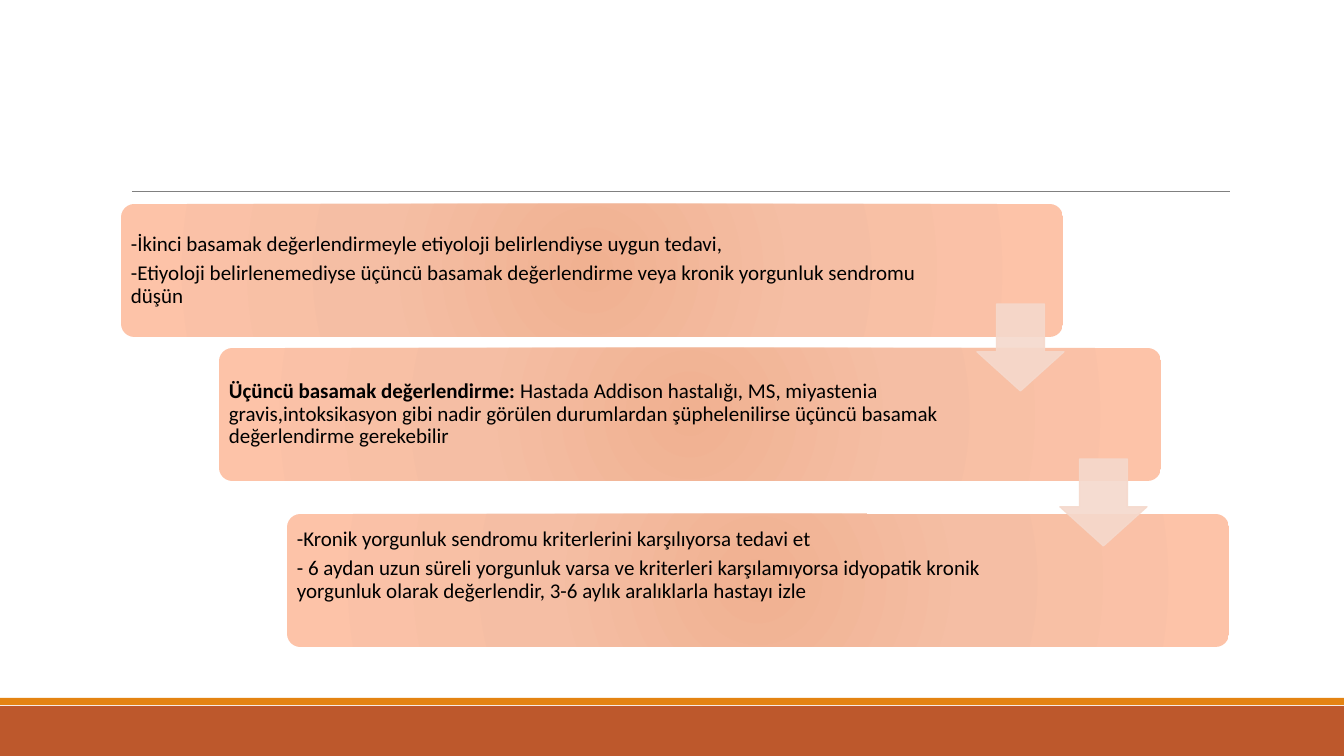
from pptx import Presentation
from pptx.dml.color import RGBColor
from pptx.enum.shapes import MSO_CONNECTOR, MSO_SHAPE
from pptx.enum.text import MSO_ANCHOR, PP_ALIGN
from pptx.oxml import parse_xml
from pptx.oxml.ns import nsdecls, qn
from pptx.util import Emu, Pt
from lxml.etree import SubElement

# Content: left, top, right inset, bottom inset, paragraphs of (text, bold) runs
STEPS = [
    (121, 204, 141, 6, [
        [("-İkinci basamak değerlendirmeyle etiyoloji belirlendiyse uygun tedavi,", False)],
        [("-Etiyoloji belirlenemediyse üçüncü basamak değerlendirme veya kronik "
          "yorgunluk sendromu düşün", False)],
    ]),
    (219, 348, 175, 6, [
        [("Üçüncü basamak değerlendirme: ", True),
         ("Hastada Addison hastalığı, MS, miyastenia gravis,intoksikasyon gibi nadir "
          "görülen durumlardan şüphelenilirse üçüncü basamak değerlendirme gerekebilir", False)],
    ]),
    (287, 514, 175, 36, [
        [("-Kronik yorgunluk sendromu kriterlerini karşılıyorsa tedavi et", False)],
        [("- 6 aydan uzun süreli yorgunluk varsa ve kriterleri karşılamıyorsa idyopatik "
          "kronik yorgunluk olarak değerlendir, 3-6 aylık aralıklarla hastayı izle", False)],
    ]),
]
ARROWS = [(977, 304), (1060, 459)]
STEP_W, STEP_H, ARROW, INSET = 942, 133, 87, 6
WIDTH, HEIGHT = 1344, 756

RUST = RGBColor(0xBD, 0x58, 0x2C)
ORANGE = RGBColor(0xE4, 0x83, 0x12)
GRAY = RGBColor(0x80, 0x80, 0x80)
BLACK = RGBColor(0, 0, 0)
PALE = RGBColor(0xF5, 0xD9, 0xCC)
GRADIENT = [(0, RGBColor(0xF0, 0xB1, 0x91)),
            (45, RGBColor(0xF5, 0xBE, 0xA4)),
            (100, RGBColor(0xFD, 0xC3, 0xA8))]


def px(n):
    return Emu(round(n * 914400 / 100.8))


def add_box(kind, x, y, w, h, color):
    sp = slide.shapes.add_shape(kind, px(x), px(y), px(w), px(h))
    sp.shadow.inherit = False
    sp.fill.solid()
    sp.fill.fore_color.rgb = color
    sp.line.fill.background()
    return sp


def set_radial_fill(sp):
    stops = "".join(f'<a:gs pos="{pos * 1000}"><a:srgbClr val="{color}"/></a:gs>'
                    for pos, color in GRADIENT)
    grad = parse_xml(
        f'<a:gradFill {nsdecls("a")} rotWithShape="1"><a:gsLst>{stops}</a:gsLst>'
        '<a:path path="circle"><a:fillToRect l="100000" t="100000" r="100000" b="100000"/>'
        '</a:path></a:gradFill>')
    props = sp.element.spPr
    props.replace(props.find(qn("a:solidFill")), grad)


def write_text(sp, paragraphs, right, bottom):
    tf = sp.text_frame
    tf.word_wrap = True
    tf.vertical_anchor = MSO_ANCHOR.MIDDLE
    tf.margin_left = tf.margin_top = px(INSET)
    tf.margin_right, tf.margin_bottom = px(right), px(bottom)
    for i, runs in enumerate(paragraphs):
        p = tf.add_paragraph() if i else tf.paragraphs[0]
        p.alignment = PP_ALIGN.LEFT
        p.line_spacing = 0.9
        p.space_after = Pt(5)
        for text, bold in runs:
            r = p.add_run()
            r.text = text
            r.font.name = "Calibri"
            r.font.size = Pt(15)
            r.font.bold = bold
            r.font.color.rgb = BLACK


prs = Presentation()
prs.slide_width, prs.slide_height = px(WIDTH), px(HEIGHT)
slide = prs.slides.add_slide(prs.slide_layouts[6])

# Footer bands and header rule
add_box(MSO_SHAPE.RECTANGLE, 0, 706, WIDTH, 50, RUST)
add_box(MSO_SHAPE.RECTANGLE, 0, 698, WIDTH, 7, ORANGE)
rule = slide.shapes.add_connector(MSO_CONNECTOR.STRAIGHT, px(132), px(191), px(1230), px(191))
rule.line.color.rgb = GRAY
rule.line.width = Pt(0.5)
SubElement(rule.element.spPr, qn("a:effectLst"))

# Staggered steps
for x, y, right, bottom, paragraphs in STEPS:
    step = add_box(MSO_SHAPE.ROUNDED_RECTANGLE, x, y, STEP_W, STEP_H, PALE)
    step.adjustments[0] = 0.1
    set_radial_fill(step)
    write_text(step, paragraphs, right, bottom)

# Translucent arrows between steps
for x, y in ARROWS:
    arrow = add_box(MSO_SHAPE.DOWN_ARROW, x, y, ARROW, ARROW, PALE)
    arrow.adjustments[0], arrow.adjustments[1] = 0.45, 0.55
    arrow.adjustments[0], arrow.adjustments[1] = 0.55, 0.45
    arrow.line.color.rgb = PALE
    arrow.line.width = Pt(1)
    for color in arrow.element.spPr.iter(qn("a:srgbClr")):
        SubElement(color, qn("a:alpha"), val="90000")

prs.save("out.pptx")
